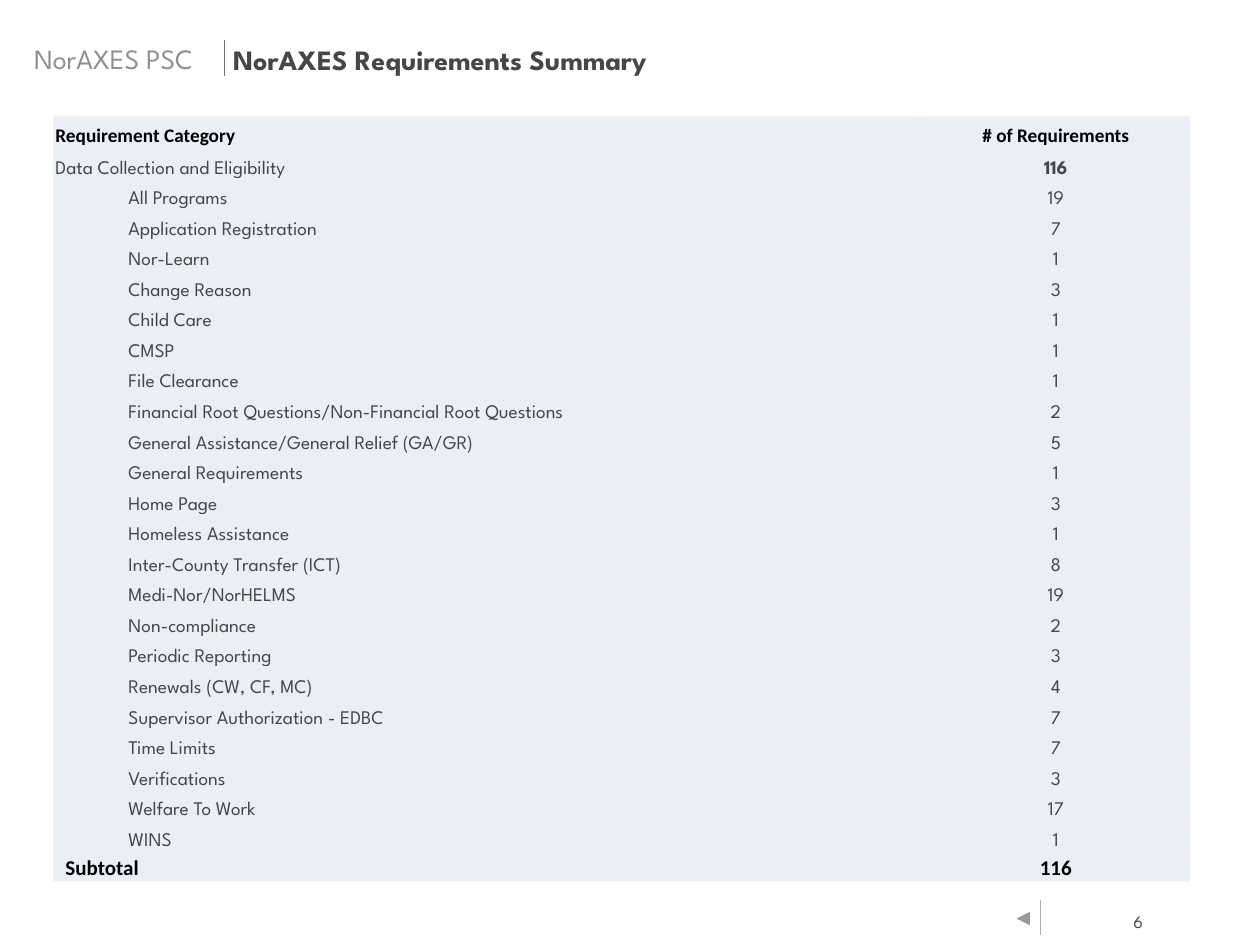
from lxml.etree import SubElement
from pptx import Presentation
from pptx.dml.color import RGBColor
from pptx.enum.shapes import MSO_CONNECTOR, MSO_SHAPE
from pptx.enum.text import MSO_ANCHOR, PP_ALIGN
from pptx.oxml.ns import qn
from pptx.util import Inches, Pt

COLORS = {
    "text": "464646",
    "muted": "909090",
    "black": "000000",
    "white": "FFFFFF",
    "title_rule": "767171",
    "footer_rule": "AFABAB",
    "cell": "EAEFF7",
    "border": "F0F0F0",
}
BODY_FONT = "League Spartan"
TABLE_FONT = "Calibri"

PROGRAMS = [
    ("All Programs", 19),
    ("Application Registration", 7),
    ("Nor-Learn", 1),
    ("Change Reason", 3),
    ("Child Care", 1),
    ("CMSP", 1),
    ("File Clearance", 1),
    ("Financial Root Questions/Non-Financial Root Questions", 2),
    ("General Assistance/General Relief (GA/GR)", 5),
    ("General Requirements", 1),
    ("Home Page", 3),
    ("Homeless Assistance", 1),
    ("Inter-County Transfer (ICT)", 8),
    ("Medi-Nor/NorHELMS", 19),
    ("Non-compliance", 2),
    ("Periodic Reporting", 3),
    ("Renewals (CW, CF, MC)", 4),
    ("Supervisor Authorization - EDBC", 7),
    ("Time Limits", 7),
    ("Verifications", 3),
    ("Welfare To Work", 17),
    ("WINS", 1),
]


def write_text(frame, text, size=11, color="text", font=BODY_FONT, bold=False,
               align=PP_ALIGN.LEFT, indent=0):
    paragraph = frame.paragraphs[0]
    paragraph.alignment = align
    if indent:
        paragraph.level = 1
        properties = paragraph._p.get_or_add_pPr()
        properties.set("marL", str(Inches(indent)))
        properties.set("indent", "0")
    run = paragraph.add_run()
    run.text = text
    run.font.size = Pt(size)
    run.font.name = font
    run.font.bold = bold
    run.font.color.rgb = RGBColor.from_string(COLORS[color])
    return paragraph


class SlideBuilder:
    """Holds the style and the current slide, and adds each kind of element."""

    def __init__(self, slide, colors):
        self.slide = slide
        self.colors = colors

    def rgb(self, name):
        return RGBColor.from_string(self.colors[name])

    def text(self, left, top, width, height, text, margins=(0, 0.05),
             anchor=MSO_ANCHOR.MIDDLE, wrap=True, **text_format):
        box = self.slide.shapes.add_textbox(
            Inches(left), Inches(top), Inches(width), Inches(height))
        frame = box.text_frame
        frame.word_wrap = wrap
        frame.vertical_anchor = anchor
        frame.margin_left = frame.margin_right = Inches(margins[0])
        frame.margin_top = frame.margin_bottom = Inches(margins[1])
        return write_text(frame, text, **text_format)

    def vertical_rule(self, left, top, bottom, color):
        rule = self.slide.shapes.add_connector(
            MSO_CONNECTOR.STRAIGHT, Inches(left), Inches(top), Inches(left), Inches(bottom))
        rule.line.color.rgb = self.rgb(color)
        rule.line.width = Pt(0.5)
        SubElement(rule._element.spPr, qn("a:effectLst"))

    def back_button(self, left, top, width, height):
        button = self.slide.shapes.add_shape(
            MSO_SHAPE.ACTION_BUTTON_FORWARD_OR_NEXT,
            Inches(left), Inches(top), Inches(width), Inches(height))
        button.rotation = 180
        button.shadow.inherit = False
        button.fill.solid()
        button.fill.fore_color.rgb = self.rgb("white")
        button.line.fill.background()

    def cell(self, cell, text, left_margin=0.01, **text_format):
        cell.margin_left = Inches(left_margin)
        cell.margin_top = cell.margin_right = Inches(0.01)
        cell.margin_bottom = 0
        cell.vertical_anchor = MSO_ANCHOR.BOTTOM
        write_text(cell.text_frame, text, **text_format)
        properties = cell._tc.get_or_add_tcPr()
        for side in ("a:lnL", "a:lnR", "a:lnT", "a:lnB"):
            border = SubElement(properties, qn(side), w=str(Pt(1)))
            fill = SubElement(border, qn("a:solidFill"))
            SubElement(fill, qn("a:srgbClr"), val=self.colors["border"])
        cell.fill.solid()
        cell.fill.fore_color.rgb = self.rgb("cell")

    def table(self, left, top, column_widths, height, rows):
        table = self.slide.shapes.add_table(
            len(rows), len(column_widths), Inches(left), Inches(top),
            Inches(sum(column_widths)), Inches(height)).table
        table.first_row = table.horz_banding = False
        for column, width in zip(table.columns, column_widths):
            column.width = Inches(width)
        for index, (category, count, category_format, count_format) in enumerate(rows):
            self.cell(table.cell(index, 0), category, **category_format)
            self.cell(table.cell(index, 1), str(count), align=PP_ALIGN.CENTER, **count_format)


def requirement_rows():
    header = {"font": TABLE_FONT, "color": "black", "bold": True}
    subtotal = {**header, "size": 12}
    program = {"left_margin": 0.09, "indent": 0.5}
    total = sum(count for _, count in PROGRAMS)
    return [
        ("Requirement Category", "# of Requirements", header, header),
        ("Data Collection and Eligibility", total, {}, {"bold": True}),
        *((name, count, program, {}) for name, count in PROGRAMS),
        ("Subtotal", total, {**subtotal, "left_margin": 0.09}, subtotal),
    ]


def main():
    presentation = Presentation()
    presentation.slide_width = Inches(10)
    presentation.slide_height = Inches(7.5)
    slide = presentation.slides.add_slide(presentation.slide_layouts[6])
    builder = SlideBuilder(slide, COLORS)

    builder.text(8.83, 7.19, 0.32, 0.24, "6", margins=(0.08, 0.04), wrap=False,
                 anchor=MSO_ANCHOR.TOP, size=10, align=PP_ALIGN.RIGHT)
    builder.back_button(8.05, 7.2, 0.14, 0.18)
    builder.vertical_rule(8.26, 7.14, 7.42, "footer_rule")
    builder.text(0.27, 0.28, 2.31, 0.37, "NorAXES PSC", size=16, color="muted")
    builder.vertical_rule(1.78, 0.32, 0.6, "title_rule")
    title = builder.text(1.85, 0.3, 7.31, 0.37, "NorAXES Requirements Summary",
                         size=16, bold=True)
    title.line_spacing = 0.9
    title.space_before = Pt(10)
    builder.table(0.43, 0.93, (6.89, 2.12), 6.07, requirement_rows())

    presentation.save("out.pptx")


if __name__ == "__main__":
    main()
